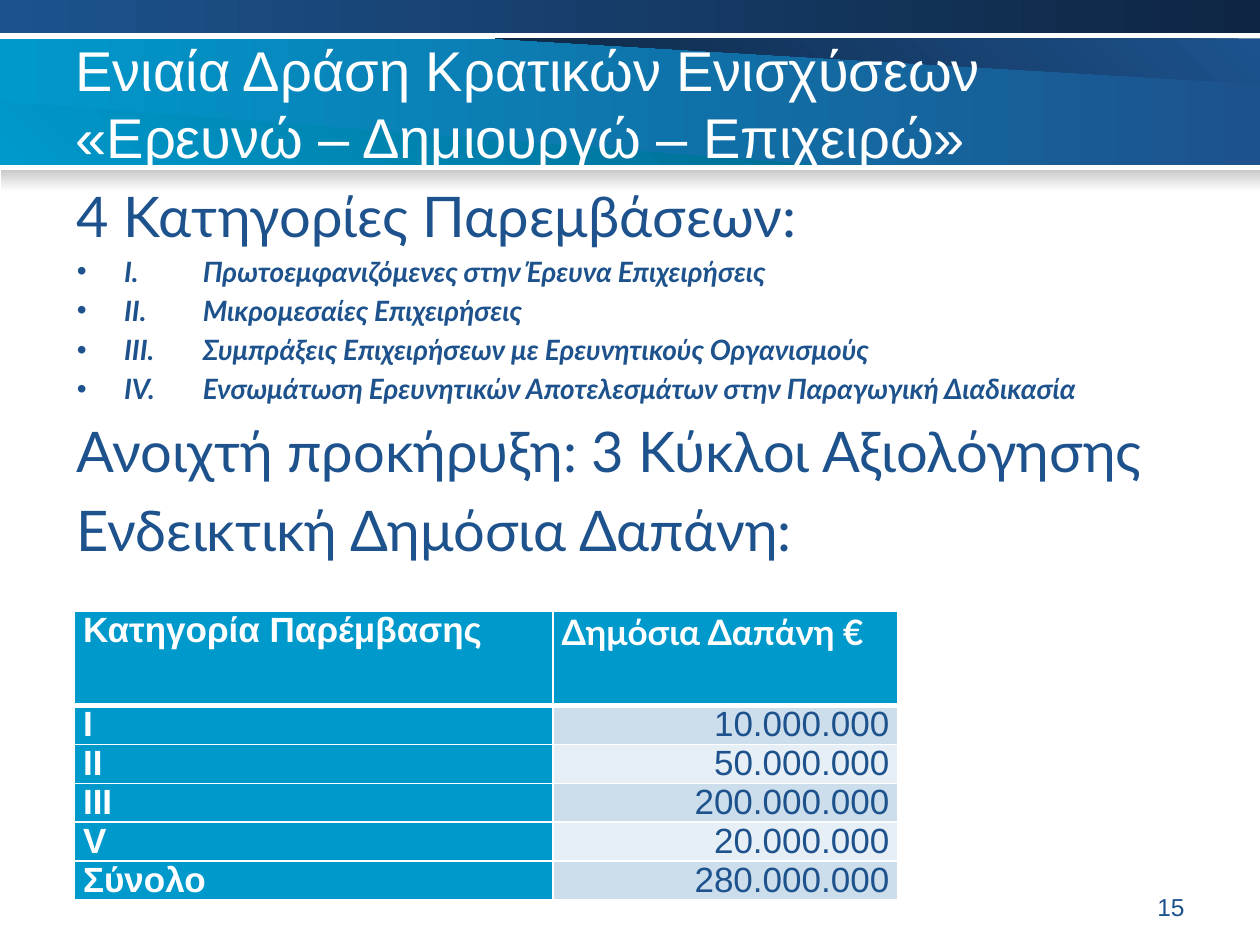
from dataclasses import dataclass

import pptx
import pptx.dml.color
import pptx.enum.shapes
import pptx.enum.text
import pptx.oxml
import pptx.oxml.ns
import pptx.util

Pt = pptx.util.Pt
Align = pptx.enum.text.PP_ALIGN
Anchor = pptx.enum.text.MSO_ANCHOR

COLORS = {
    "white": "FFFFFF", "blue": "1D528D", "navy": "0E2643", "cyan": "0099CC",
    "teal": "006D92", "gray": "CACACA", "dark_row": "CCDEEC", "light_row": "E7EFF6",
}


@dataclass
class Band:
    points: list[tuple[float, float]]
    start: str
    end: str
    angle: float


@dataclass
class Line:
    text: str
    size: float = 32
    bullet: bool = False


BANDS = [
    Band([(0, 22.3), (720, 22.3), (720, 94.3), (0, 94.3)], "cyan", "blue", 0),
    Band([(707, 22.3), (283, 22.3), (720, 48), (720, 22.3)], "blue", "navy", 225),
    Band([(13.7, 94.3), (463, 94.3), (0, 58.3), (0, 94.3)], "cyan", "teal", 45),
    Band([(0, 0), (720, 0), (720, 18.7), (0, 18.7)], "blue", "navy", 0),
    Band([(0.7, 97.2), (720, 97.2), (720, 109.4), (0.7, 109.4)], "gray", "white", 270),
]
LINES = [
    Line("4 Κατηγορίες Παρεμβάσεων:"),
    Line("I.\tΠρωτοεμφανιζόμενες στην Έρευνα Επιχειρήσεις", 16, True),
    Line("II.\tΜικρομεσαίες Επιχειρήσεις", 16, True),
    Line("III.\tΣυμπράξεις Επιχειρήσεων με Ερευνητικούς Οργανισμούς", 16, True),
    Line("IV.\tΕνσωμάτωση Ερευνητικών Αποτελεσμάτων στην Παραγωγική Διαδικασία", 16, True),
    Line("Ανοιχτή προκήρυξη: 3 Κύκλοι Αξιολόγησης"),
    Line("Ενδεικτική Δημόσια Δαπάνη:"),
]
ROWS = [
    ("Κατηγορία Παρέμβασης", "Δημόσια Δαπάνη €"),
    ("I", "10.000.000"),
    ("II", "50.000.000"),
    ("III", "200.000.000"),
    ("V", "20.000.000"),
    ("Σύνολο", "280.000.000"),
]


def rgb(name: str) -> pptx.dml.color.RGBColor:
    return pptx.dml.color.RGBColor.from_string(COLORS[name])


def write_text(paragraph, text: str, *, size: float, color: str, font: str = "Arial",
               bold: bool = False, italic: bool = False, align=Align.LEFT) -> None:
    paragraph.text = text
    paragraph.alignment = align
    for run in paragraph.runs:
        run.font.name = font
        run.font.size = Pt(size)
        run.font.bold = bold
        run.font.italic = italic
        run.font.color.rgb = rgb(color)


def place(shape, left: float, top: float, width: float, height: float) -> None:
    shape.left, shape.top = Pt(left), Pt(top)
    shape.width, shape.height = Pt(width), Pt(height)


def add_xml(parent, markup: str) -> None:
    tag, rest = markup.split(" ", 1)
    namespace = pptx.oxml.ns.nsdecls("a")
    parent.append(pptx.oxml.parse_xml(f"<{tag} {namespace} {rest}"))


def draw_band(slide, band: Band) -> None:
    (left, top), *others = band.points
    if len({point[0] for point in band.points}) == 2:
        right, bottom = band.points[2]
        shape = slide.shapes.add_shape(
            pptx.enum.shapes.MSO_SHAPE.RECTANGLE,
            Pt(left), Pt(top), Pt(right - left), Pt(bottom - top))
    else:
        builder = slide.shapes.build_freeform(left, top, scale=Pt(1))
        builder.add_line_segments(others, close=True)
        shape = builder.convert_to_shape()
    shape.shadow.inherit = False
    shape.line.fill.background()
    shape.fill.gradient()
    shape.fill.gradient_angle = band.angle
    for stop, color in zip(shape.fill.gradient_stops, (band.start, band.end)):
        stop.color.rgb = rgb(color)


def write_title(title) -> None:
    place(title, 36, 15.1, 648, 96.5)
    frame = title.text_frame
    frame.auto_size = pptx.enum.text.MSO_AUTO_SIZE.NONE
    frame.vertical_anchor = Anchor.MIDDLE
    frame.margin_bottom = Pt(13)
    write_text(frame.paragraphs[0],
               "Ενιαία Δράση Κρατικών Ενισχύσεων\v«Ερευνώ – Δημιουργώ – Επιχειρώ»",
               size=32, color="white")


def write_body(body, lines: list[Line]) -> None:
    place(body, 36.7, 100.1, 648, 398)
    frame = body.text_frame
    frame.auto_size = pptx.enum.text.MSO_AUTO_SIZE.NONE
    frame.vertical_anchor = Anchor.TOP
    for index, line in enumerate(lines):
        paragraph = frame.add_paragraph() if index else frame.paragraphs[0]
        paragraph.space_before = Pt(0.2 * line.size if index else 0)
        properties = paragraph._p.get_or_add_pPr()
        indent = Pt(27 if line.bullet else 0)
        properties.set("marL", str(indent))
        properties.set("indent", str(-indent))
        if line.bullet:
            add_xml(properties, 'a:buFont typeface="Arial"/>')
            add_xml(properties, 'a:buChar char="•"/>')
            add_xml(properties, f'><a:tab pos="{Pt(72)}" algn="l"/></a:tabLst>'.join(["a:tabLst ", ""]))
        else:
            add_xml(properties, "a:buNone />")
        write_text(paragraph, line.text, size=line.size, color="blue", font="Lato",
                   bold=line.bullet, italic=line.bullet)


def format_cell(cell, text: str, row: int, column: int) -> None:
    header, label = row == 0, column == 0
    properties = cell._tc.get_or_add_tcPr()
    for side in "LRTB":
        heavy = (header and side == "B") or (row == 1 and side == "T")
        add_xml(properties, f'a:ln{side} w="{Pt(3 if heavy else 1)}"><a:solidFill>'
                            f'<a:srgbClr val="{COLORS["white"]}"/></a:solidFill></a:ln{side}>')
    cell.fill.solid()
    cell.fill.fore_color.rgb = rgb(
        "cyan" if header or label else "dark_row" if row % 2 else "light_row")
    cell.margin_left = cell.margin_right = Pt(5)
    cell.margin_top = cell.margin_bottom = Pt(0)
    paragraph = cell.text_frame.paragraphs[0]
    if not header:
        paragraph.line_spacing = Pt(22)
    write_text(paragraph, text, size=20,
               color="white" if header or label else "blue",
               font="Lato" if header and not label else "Arial",
               bold=header or label,
               align=Align.JUSTIFY if header or label else Align.RIGHT)


def draw_table(slide, rows: list[tuple[str, str]]) -> None:
    heights = [54] + [22.2] * (len(rows) - 1)
    widths = [273.5, 197.3]
    table = slide.shapes.add_table(len(rows), len(widths), Pt(42.5), Pt(349.2),
                                   Pt(sum(widths)), Pt(sum(heights))).table
    for column, width in zip(table.columns, widths):
        column.width = Pt(width)
    for row_index, (values, height) in enumerate(zip(rows, heights)):
        table.rows[row_index].height = Pt(height)
        for column_index, value in enumerate(values):
            format_cell(table.cell(row_index, column_index), value, row_index, column_index)


def draw_page_number(slide) -> None:
    frame = slide.shapes.add_textbox(Pt(516.2), Pt(509.8), Pt(167.8), Pt(19.4)).text_frame
    frame.word_wrap = True
    frame.margin_top = frame.margin_bottom = Pt(0)
    frame.vertical_anchor = Anchor.TOP
    write_text(frame.paragraphs[0], "15", size=14, color="blue", align=Align.RIGHT)


def main() -> None:
    presentation = pptx.Presentation()
    presentation.slide_width, presentation.slide_height = Pt(720), Pt(540)
    slide = presentation.slides.add_slide(presentation.slide_layouts[1])
    title, body = slide.shapes.title, slide.placeholders[1]
    for band in BANDS:
        draw_band(slide, band)
    for placeholder in (title, body):
        slide.shapes._spTree.append(placeholder._element)
    write_title(title)
    write_body(body, LINES)
    draw_page_number(slide)
    draw_table(slide, ROWS)
    presentation.save("out.pptx")


if __name__ == "__main__":
    main()
